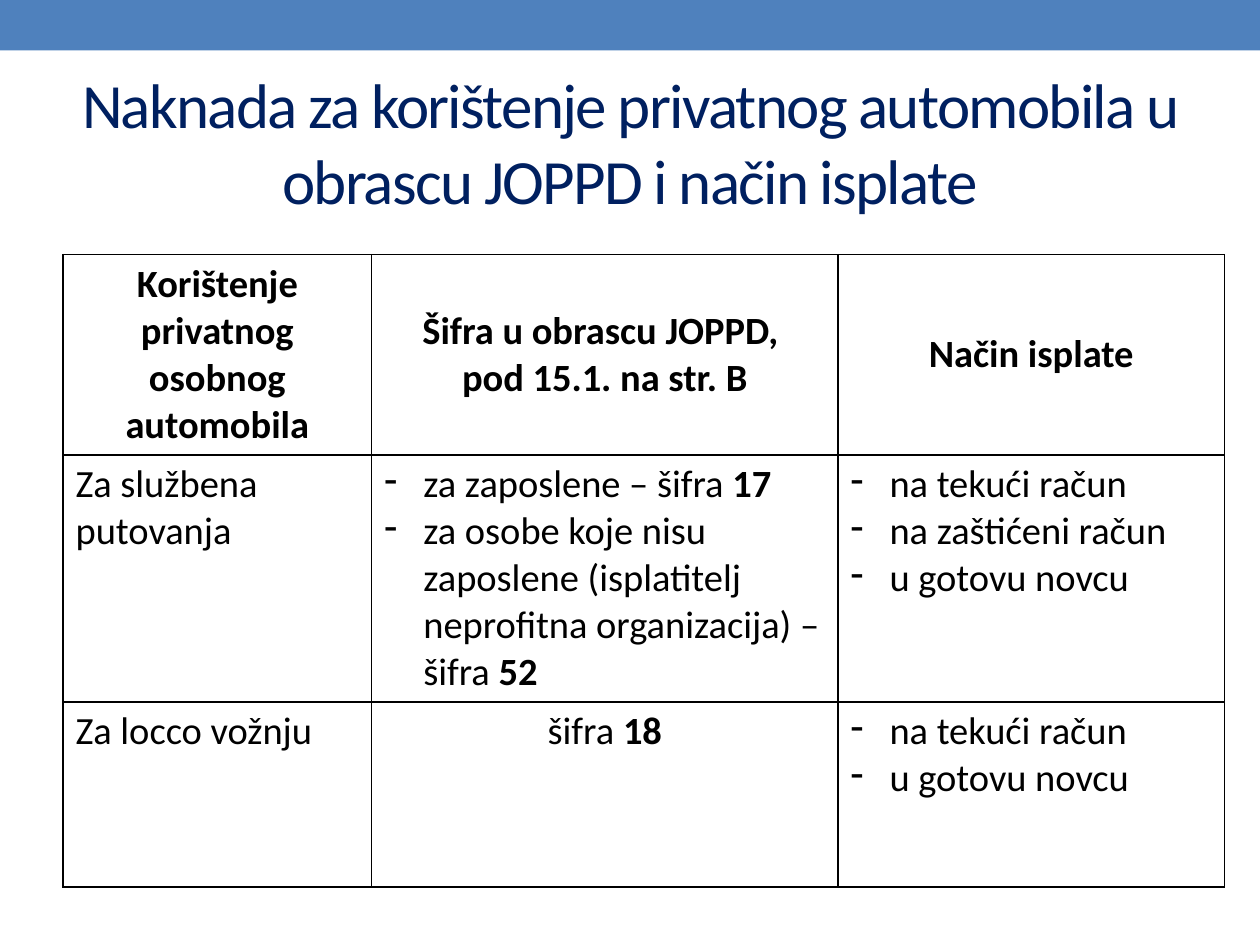
from lxml.etree import SubElement
from pptx import Presentation
from pptx.dml.color import RGBColor
from pptx.enum.shapes import MSO_SHAPE
from pptx.enum.text import MSO_ANCHOR, PP_ALIGN
from pptx.oxml.ns import qn
from pptx.util import Inches, Pt

WIDE, HIGH = 10, 7.5
COLS = [2.45, 3.7, 3.07]
ROWS = [1.59, 1.96, 1.47]
INDENT = 0.31

# A line is a list of (text, bold) runs; a leading "-" marks a list item.
HEAD = [
    ["Korištenje privatnog osobnog automobila"],
    ["Šifra u obrascu JOPPD, ", "pod 15.1. na str. B"],
    ["Način isplate"],
]
BODY = [
    [
        ["Za službena putovanja"],
        ["-za zaposlene – šifra |17",
         "-za osobe koje nisu zaposlene (isplatitelj neprofitna organizacija) – šifra |52"],
        ["-na tekući račun", "-na zaštićeni račun", "-u gotovu novcu"],
    ],
    [
        ["Za locco vožnju"],
        ["šifra |18"],
        ["-na tekući račun", "-u gotovu novcu"],
    ],
]


def color(code):
    return RGBColor.from_string(code)


def style(run, size, code, bold=False):
    font = run.font
    font.name, font.size, font.bold = "Calibri", Pt(size), bold
    font.color.rgb = color(code)


def add_band(slide, left, top, width, height):
    band = slide.shapes.add_shape(
        MSO_SHAPE.RECTANGLE, *map(Inches, (left, top, width, height)))
    band.shadow.inherit = False
    band.fill.solid()
    band.fill.fore_color.rgb = color("4F81BD")
    band.line.fill.background()


def add_title(slide, left, top, width, height, text):
    box = slide.shapes.add_textbox(*map(Inches, (left, top, width, height)))
    frame = box.text_frame
    frame.word_wrap = True
    frame.vertical_anchor = MSO_ANCHOR.MIDDLE
    frame.text = text
    para = frame.paragraphs[0]
    para.alignment = PP_ALIGN.CENTER
    run = para.runs[0]
    style(run, 36, "002060")
    run.font._element.set("spc", "-100")


def add_dash(para):
    props = para._p.get_or_add_pPr()
    props.set("marL", str(Inches(INDENT)))
    props.set("indent", str(-Inches(INDENT)))
    SubElement(props, qn("a:buFontTx"))
    SubElement(props, qn("a:buChar"), char="-")


def add_edges(cell):
    props = cell._tc.get_or_add_tcPr()
    for side in ("lnL", "lnR", "lnT", "lnB"):
        line = SubElement(props, qn(f"a:{side}"), w=str(Pt(1)))
        fill = SubElement(line, qn("a:solidFill"))
        SubElement(fill, qn("a:srgbClr"), val="000000")


def fill_cell(cell, lines, head):
    add_edges(cell)
    cell.fill.background()
    cell.vertical_anchor = MSO_ANCHOR.MIDDLE if head else MSO_ANCHOR.TOP
    frame = cell.text_frame
    for i, line in enumerate(lines):
        para = frame.add_paragraph() if i else frame.paragraphs[0]
        if line.startswith("-"):
            add_dash(para)
        elif head or "|" in line:
            para.alignment = PP_ALIGN.CENTER
        for j, part in enumerate(line.removeprefix("-").split("|")):
            run = para.add_run()
            run.text = part
            style(run, 22, "000000", head or j == 1)


def add_grid(slide, left, top, cols, rows, data):
    box = map(Inches, (left, top, sum(cols), sum(rows)))
    table = slide.shapes.add_table(len(rows), len(cols), *box).table
    table.first_row = table.horz_banding = False
    for col, width in zip(table.columns, cols):
        col.width = Inches(width)
    for r, (row, height) in enumerate(zip(table.rows, rows)):
        row.height = Inches(height)
        for cell, lines in zip(row.cells, data[r]):
            fill_cell(cell, lines, r == 0)


def main():
    deck = Presentation()
    deck.slide_width, deck.slide_height = Inches(WIDE), Inches(HIGH)
    slide = deck.slides.add_slide(deck.slide_layouts[6])
    edge = WIDE / 20
    add_band(slide, 0, 0, WIDE, 0.4)
    add_title(slide, edge, 0.58, WIDE - 2 * edge, 1.08,
              "Naknada za korištenje privatnog automobila u obrascu JOPPD i način isplate")
    add_grid(slide, edge, 2.02, COLS, ROWS, [HEAD] + BODY)
    deck.save("out.pptx")


if __name__ == "__main__":
    main()
